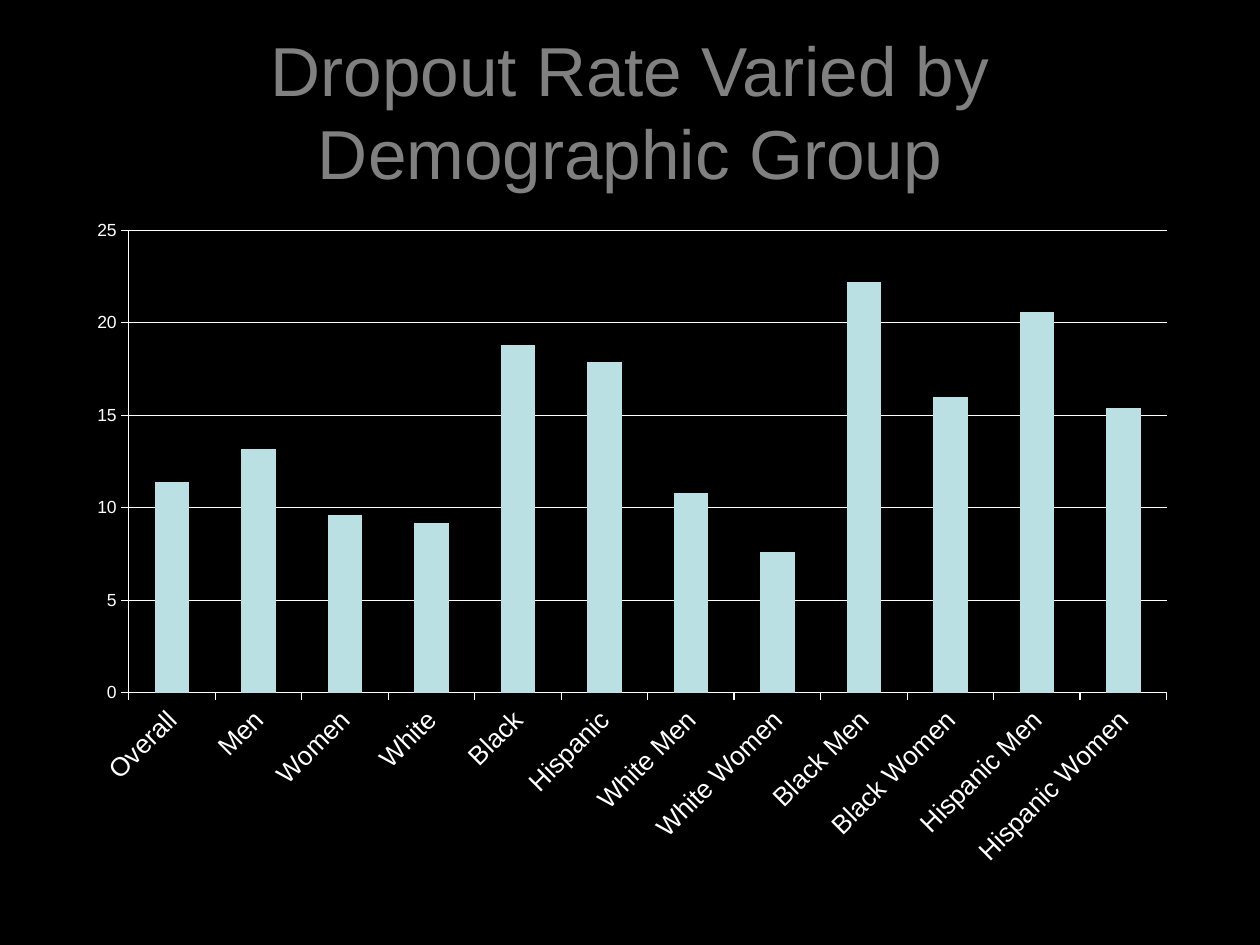
from lxml.etree import SubElement
from pptx import Presentation
from pptx.chart.data import CategoryChartData
from pptx.dml.color import RGBColor
from pptx.enum.chart import XL_CHART_TYPE, XL_TICK_MARK
from pptx.enum.text import MSO_ANCHOR, PP_ALIGN
from pptx.oxml.ns import qn
from pptx.util import Cm, Pt

TITLE = "Dropout Rate Varied by Demographic Group"
RATES = {
    "Overall": 11.4,
    "Men": 13.2,
    "Women": 9.6,
    "White": 9.2,
    "Black": 18.8,
    "Hispanic": 17.9,
    "White Men": 10.8,
    "White Women": 7.6,
    "Black Men": 22.2,
    "Black Women": 16,
    "Hispanic Men": 20.6,
    "Hispanic Women": 15.4,
}
PLOT_AREA = {"x": 0.05, "y": 0.03, "w": 0.93, "h": 0.69}
FONT = "Arial"
BLACK = RGBColor(0x00, 0x00, 0x00)
GRAY = RGBColor(0x80, 0x80, 0x80)
WHITE = RGBColor(0xFF, 0xFF, 0xFF)
PALE_TEAL = RGBColor(0xBB, 0xE0, 0xE3)


def style_font(font, size, color):
    font.name = FONT
    font.size = Pt(size)
    font.color.rgb = color


def style_line(line):
    line.color.rgb = WHITE
    line.width = Pt(0.75)


def add_title(slide):
    sp = slide.shapes.add_textbox(Cm(1.9), Cm(0.64), Cm(21.6), Cm(3.18))
    tf = sp.text_frame
    tf.word_wrap = True
    tf.vertical_anchor = MSO_ANCHOR.MIDDLE
    tf.text = TITLE
    p = tf.paragraphs[0]
    p.alignment = PP_ALIGN.CENTER
    style_font(p.runs[0].font, 39.6, GRAY)


def place_plot_area(chart):
    plot_area = chart.plots[0]._element.getparent()
    layout = plot_area.find(qn("c:layout"))
    if layout is None:
        layout = SubElement(plot_area, qn("c:layout"))
        plot_area.insert(0, layout)
    manual = SubElement(layout, qn("c:manualLayout"))
    settings = {"layoutTarget": "inner", "xMode": "edge", "yMode": "edge", **PLOT_AREA}
    for tag, value in settings.items():
        SubElement(manual, qn(f"c:{tag}")).set("val", str(value))


def add_rate_chart(slide):
    data = CategoryChartData()
    data.categories = list(RATES)
    data.add_series("Series 1", list(RATES.values()))
    chart = slide.shapes.add_chart(
        XL_CHART_TYPE.COLUMN_CLUSTERED, Cm(1.47), Cm(4.24), Cm(22.5), Cm(13.51), data
    ).chart
    chart.has_legend = False
    chart.has_title = False
    style_font(chart.font, 10, WHITE)

    plot = chart.plots[0]
    plot.gap_width = 150
    plot.vary_by_categories = False
    fill = plot.series[0].format.fill
    fill.solid()
    fill.fore_color.rgb = PALE_TEAL

    cat_axis, val_axis = chart.category_axis, chart.value_axis
    for axis, size in ((cat_axis, 15), (val_axis, 10)):
        axis.major_tick_mark = XL_TICK_MARK.OUTSIDE
        axis.minor_tick_mark = XL_TICK_MARK.NONE
        style_font(axis.tick_labels.font, size, WHITE)
        style_line(axis.format.line)
    body = cat_axis._element.find(qn("c:txPr")).find(qn("a:bodyPr"))
    body.set("rot", "-2700000")
    body.set("vert", "horz")

    val_axis.minimum_scale, val_axis.maximum_scale = 0, 25
    val_axis.major_unit = 5
    val_axis.has_major_gridlines = True
    style_line(val_axis.major_gridlines.format.line)
    place_plot_area(chart)


def main():
    prs = Presentation()
    prs.slide_width, prs.slide_height = Cm(25.4), Cm(19.05)
    s = prs.slides.add_slide(prs.slide_layouts[6])
    s.background.fill.solid()
    s.background.fill.fore_color.rgb = BLACK
    add_title(s)
    add_rate_chart(s)
    prs.save("out.pptx")


if __name__ == "__main__":
    main()
